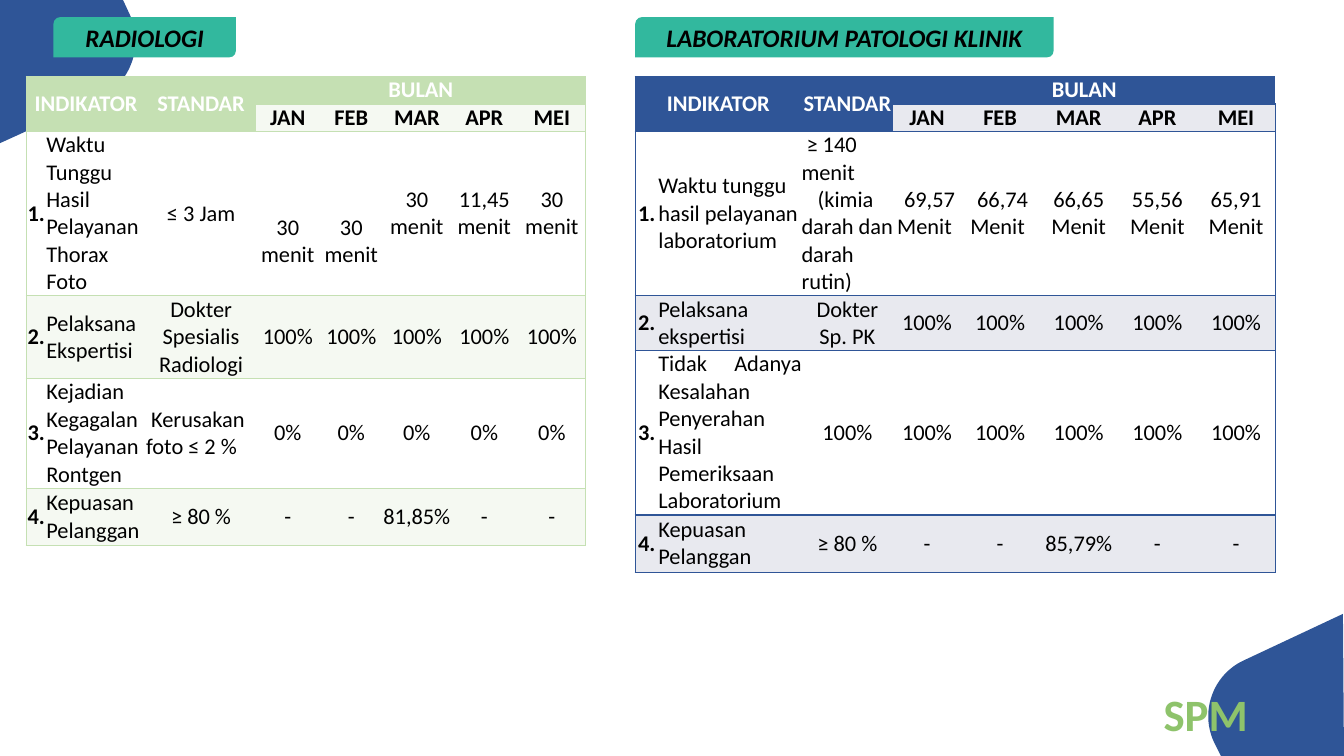
"""Build the SPM slide with the radiology and clinical pathology indicator tables."""
from lxml import etree
from pptx import Presentation
from pptx import util as u
from pptx.dml.color import RGBColor
from pptx.enum import shapes, text
from pptx.oxml.ns import qn

Inches = u.Inches
COLORS = {"blue": "2F5597", "green": "C5E0B3", "teal": "32B89E", "lime": "8EC36B",
          "pale green": "F5F9F2", "pale blue": "E8E9EF", "white": "FFFFFF", "black": "000000"}
ALIGN = text.PP_ALIGN
MONTHS = ["JAN", "FEB", "MAR", "APR", "MEI"]


def add_text(para, wording, size, color, bold=True, italic=False):
    span = para.add_run()
    span.text = wording
    span.font.name = "Calibri"
    span.font.size = u.Pt(size)
    span.font.bold = bold
    span.font.italic = italic
    span.font.color.rgb = RGBColor.from_string(COLORS[color])


def add_border(cell, side, color):
    line = etree.SubElement(cell._tc.get_or_add_tcPr(), qn("a:ln" + side), w=str(u.Pt(1)))
    fill = etree.SubElement(line, qn("a:solidFill"))
    etree.SubElement(fill, qn("a:srgbClr"), val=COLORS[color])


deck = Presentation()
deck.slide_width, deck.slide_height = Inches(13.33), Inches(7.5)
page = deck.slides.add_slide(deck.slide_layouts[5])

corners = [
    ([(13.33, 7.5), (12.11, 7.5)],
     [[(12.04, 7.36), (11.9, 7.06), (12.03, 6.69), (12.34, 6.55)]], [(13.32, 6.09)]),
    ([(0, 0), (1.22, 0)],
     [[(1.29, 0.15), (1.43, 0.46), (1.29, 0.83), (0.99, 0.97)]], [(0, 1.42)]),
]
for before, curves, after in corners:
    outline = list(before)
    for curve in curves:
        for step in range(25):
            t = step / 24
            weights = [(1 - t) ** 3, 3 * t * (1 - t) ** 2, 3 * t ** 2 * (1 - t), t ** 3]
            outline.append(tuple(sum(w * point[axis] for w, point in zip(weights, curve))
                                 for axis in (0, 1)))
    outline = [(Inches(x), Inches(y)) for x, y in outline + after]
    builder = page.shapes.build_freeform(*outline[0], scale=1.0)
    builder.add_line_segments(outline[1:], close=True)
    corner = builder.convert_to_shape()
    corner.shadow.inherit = False
    corner.fill.solid()
    corner.fill.fore_color.rgb = RGBColor.from_string(COLORS["blue"])
    corner.line.fill.background()

sections = [
    {"left": 0.26, "main": "green", "band": "pale green",
     "columns": [0.2, 0.99, 1.09, 0.63, 0.63, 0.67, 0.67, 0.67],
     "heights": [0.27, 0.27, 1.63, 0.82, 1.09, 0.57],
     "indents": {(4, 2): [0.05]}, "low": [(2, 3), (2, 4)],
     "rows": [
         ["Waktu Tunggu Hasil Pelayanan Thorax Foto", "≤ 3 Jam",
          "30 menit", "30 menit", "30 menit", "11,45 menit", "30 menit"],
         ["Pelaksana Ekspertisi", "Dokter Spesialis Radiologi"] + ["100%"] * 5,
         ["Kejadian Kegagalan Pelayanan Rontgen", "Kerusakan foto ≤ 2 %"] + ["0%"] * 5,
         ["Kepuasan Pelanggan", "≥ 80 %", "-", "-", "81,85%", "-", "-"]]},
    {"left": 6.3, "main": "blue", "band": "pale blue",
     "columns": [0.23, 1.42, 0.91, 0.67, 0.78, 0.78, 0.78, 0.78],
     "heights": [0.27, 0.27, 1.63, 0.54, 1.63, 0.57],
     "indents": {(2, 1): [0], (2, 2): [0.05, 0.16]}, "low": [],
     "rows": [
         ["Waktu tunggu hasil pelayanan laboratorium",
          "≥ 140 menit\n(kimia darah dan darah rutin)",
          " 69,57 Menit ", " 66,74 Menit ", "66,65 Menit", "55,56 Menit", "65,91 Menit"],
         ["Pelaksana ekspertisi", "Dokter Sp. PK"] + ["100%"] * 5,
         ["Tidak Adanya Kesalahan Penyerahan Hasil Pemeriksaan Laboratorium"] + ["100%"] * 6,
         ["Kepuasan Pelanggan", "≥ 80 %", "-", "-", "85,79%", "-", "-"]]},
]
for section in sections:
    grid = [["INDIKATOR", "", "STANDAR", "BULAN", "", "", "", ""], ["", "", ""] + MONTHS]
    grid += [[f"{number}."] + row for number, row in enumerate(section["rows"], 1)]
    frame = page.shapes.add_table(
        len(grid), 8, Inches(section["left"]), Inches(0.76),
        Inches(sum(section["columns"])), Inches(sum(section["heights"])))
    table = frame.table
    table.first_row = table.horz_banding = False
    style = table._tbl.tblPr.find(qn("a:tableStyleId"))
    style.text = "{2D5ABB26-0587-4C30-8999-92F81FD0307C}"
    for column, width in zip(table.columns, section["columns"]):
        column.width = Inches(width)
    for row, height in zip(table.rows, section["heights"]):
        row.height = Inches(height)
    for first, last in [((0, 0), (1, 1)), ((0, 2), (1, 2)), ((0, 3), (0, 7))]:
        table.cell(*first).merge(table.cell(*last))

    for r, row in enumerate(grid):
        for c, wording in enumerate(row):
            cell = table.cell(r, c)
            heading = r == 0 or (r == 1 and c < 3)
            low = (r, c) in section["low"]
            sides = ["L"] * (c == 0) + ["R"] * (c == 7) + ["T", "B"]
            for side in sides:
                add_border(cell, side, section["main"])
            cell.fill.solid()
            fill = section["main"] if heading else section["band"] if r % 2 else "white"
            cell.fill.fore_color.rgb = RGBColor.from_string(COLORS[fill])
            cell.margin_left = cell.margin_right = cell.margin_top = 0
            cell.margin_bottom = Inches(0.27 if low else 0)
            cell.vertical_anchor = text.MSO_ANCHOR.BOTTOM if low else text.MSO_ANCHOR.MIDDLE
            if not wording:
                continue
            indents = section["indents"].get((r, c))
            for i, part in enumerate(wording.split("\n")):
                para = cell.text_frame.add_paragraph() if i else cell.text_frame.paragraphs[0]
                if indents:
                    para.alignment = ALIGN.LEFT
                    para._p.get_or_add_pPr().set("indent", str(Inches(indents[i])))
                else:
                    para.alignment = ALIGN.JUSTIFY if c == 1 else ALIGN.CENTER
                add_text(para, part, 16, "white" if heading else "black", bold=r < 2 or c == 0)

for left, width, wording in [(0.53, 1.81, "RADIOLOGI"),
                             (6.3, 4.15, "LABORATORIUM PATOLOGI KLINIK")]:
    label = page.shapes.add_shape(shapes.MSO_SHAPE.ROUND_2_DIAG_RECTANGLE,
                                  Inches(left), Inches(0.17), Inches(width), Inches(0.4))
    label.shadow.inherit = False
    label.fill.solid()
    label.fill.fore_color.rgb = RGBColor.from_string(COLORS["teal"])
    label.line.fill.background()
    label.text_frame.vertical_anchor = text.MSO_ANCHOR.MIDDLE
    para = label.text_frame.paragraphs[0]
    para.alignment = ALIGN.CENTER
    add_text(para, wording, 18, "black", italic=True)

title = page.shapes.title
title.left, title.top, title.width, title.height = map(Inches, (11.44, 6.76, 1.18, 0.64))
title.text_frame.word_wrap = True
title.text_frame.auto_size = text.MSO_AUTO_SIZE.NONE
title.text_frame.vertical_anchor = text.MSO_ANCHOR.TOP
para = title.text_frame.paragraphs[0]
para.alignment = ALIGN.LEFT
add_text(para, "SPM", 32, "lime")
title.element.getparent().append(title.element)

deck.save("out.pptx")
